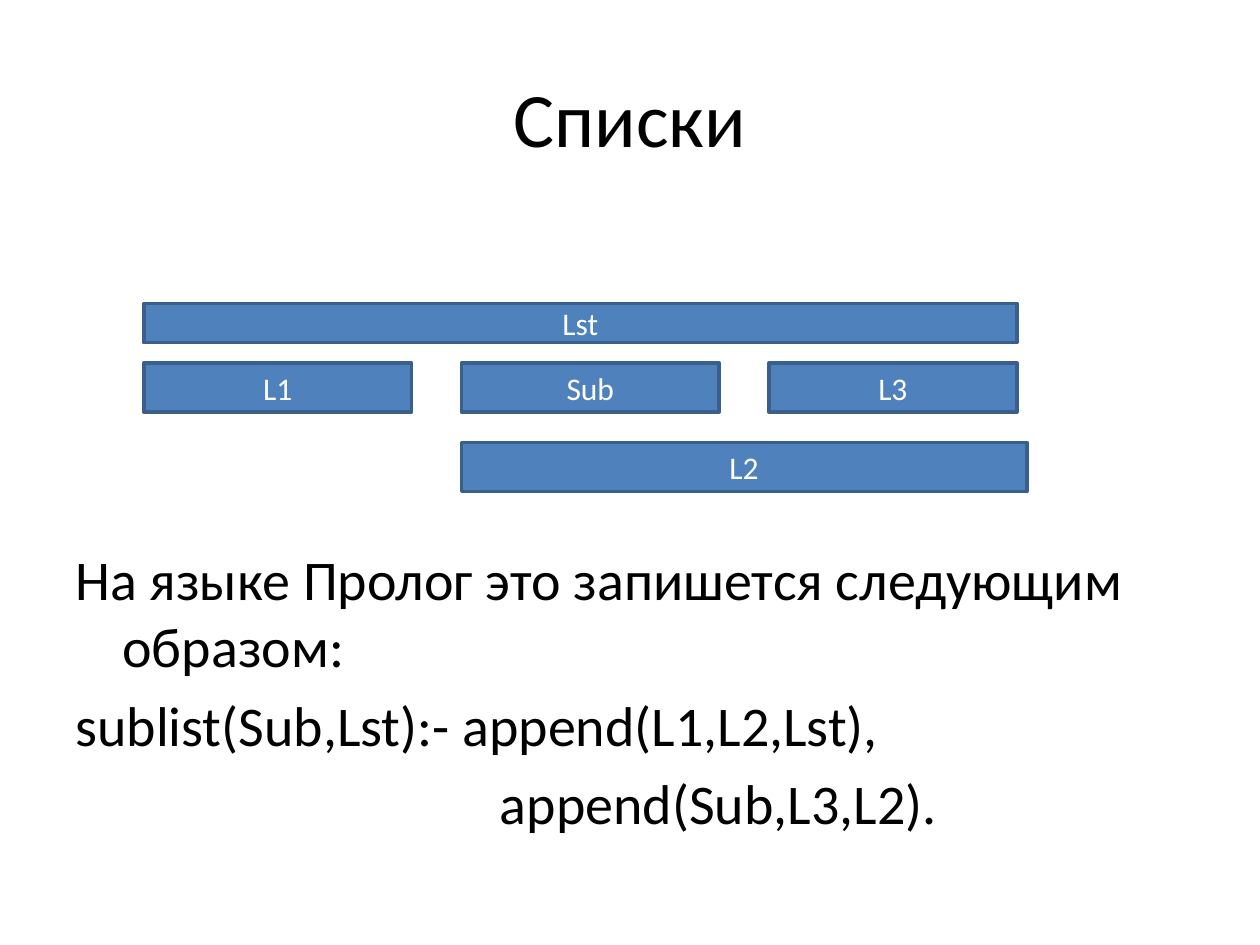
from dataclasses import dataclass

from pptx import Presentation
from pptx.dml.color import RGBColor as Rgb
from pptx.enum.shapes import MSO_SHAPE as Shape
from pptx.enum.text import MSO_ANCHOR as Anchor, PP_ALIGN as Align
from pptx.util import Cm, Pt

TITLE = "Списки"
BARS = [
    ("L1", "middle", 2.9, 8.3),
    ("Sub", "middle", 9.3, 14.5),
    ("L3", "middle", 15.5, 20.5),
    ("Lst", "top", 2.9, 20.5),
    ("L2", "bottom", 9.3, 20.7),
]
ROWS = {"top": (6.12, 0.79), "middle": (7.32, 0.99), "bottom": (8.92, 0.99)}
HANGING = (0.95, -0.95)
CODE_INDENT = (8.56, 0)
LINES = [
    ("На языке Пролог это запишется следующим образом:", HANGING, 0),
    ("sublist(Sub,Lst):- append(L1,L2,Lst),", HANGING, 6.4),
    ("append(Sub,L3,L2).", CODE_INDENT, 6.4),
]


@dataclass(frozen=True)
class Theme:
    font: str = "Calibri"
    text: Rgb = Rgb(0, 0, 0)
    bar: Rgb = Rgb(0x4F, 0x81, 0xBD)
    outline: Rgb = Rgb(0x3A, 0x5F, 0x8C)
    label: Rgb = Rgb(255, 255, 255)
    title_size: int = 44
    body_size: int = 32
    label_size: int = 18
    outline_width: int = 2


THEME = Theme()


def write(para, text, size, color, align):
    para.text = text
    para.alignment = align
    para.font.name = THEME.font
    para.font.size = Pt(size)
    para.font.color.rgb = color


def add_title(slide):
    title = slide.shapes.title
    title.left, title.top, title.width, title.height = map(Cm, (1.27, 0.76, 22.86, 3.18))
    title.text_frame.vertical_anchor = Anchor.MIDDLE
    write(title.text_frame.paragraphs[0], TITLE, THEME.title_size, THEME.text, Align.CENTER)


def add_bar(slide, name, row, left, right):
    top, height = ROWS[row]
    bar = slide.shapes.add_shape(Shape.RECTANGLE, Cm(left), Cm(top), Cm(right - left), Cm(height))
    bar.shadow.inherit = False
    bar.fill.solid()
    bar.fill.fore_color.rgb = THEME.bar
    bar.line.color.rgb = THEME.outline
    bar.line.width = Pt(THEME.outline_width)
    bar.text_frame.vertical_anchor = Anchor.MIDDLE
    write(bar.text_frame.paragraphs[0], name, THEME.label_size, THEME.label, Align.CENTER)


def add_body(slide):
    box = slide.shapes.add_textbox(Cm(1.27), Cm(10.85), Cm(22.86), Cm(6.17))
    frame = box.text_frame
    frame.word_wrap = True
    for index, (text, (margin, indent), space) in enumerate(LINES):
        para = frame.add_paragraph() if index else frame.paragraphs[0]
        write(para, text, THEME.body_size, THEME.text, Align.LEFT)
        para.space_before = Pt(space)
        properties = para._p.get_or_add_pPr()
        properties.set("marL", str(Cm(margin)))
        properties.set("indent", str(Cm(indent)))


def main():
    deck = Presentation()
    deck.slide_width, deck.slide_height = Cm(25.4), Cm(19.05)
    slide = deck.slides.add_slide(deck.slide_layouts.get_by_name("Title Only"))
    add_title(slide)
    add_body(slide)
    for bar in BARS:
        add_bar(slide, *bar)
    deck.save("out.pptx")


if __name__ == "__main__":
    main()
